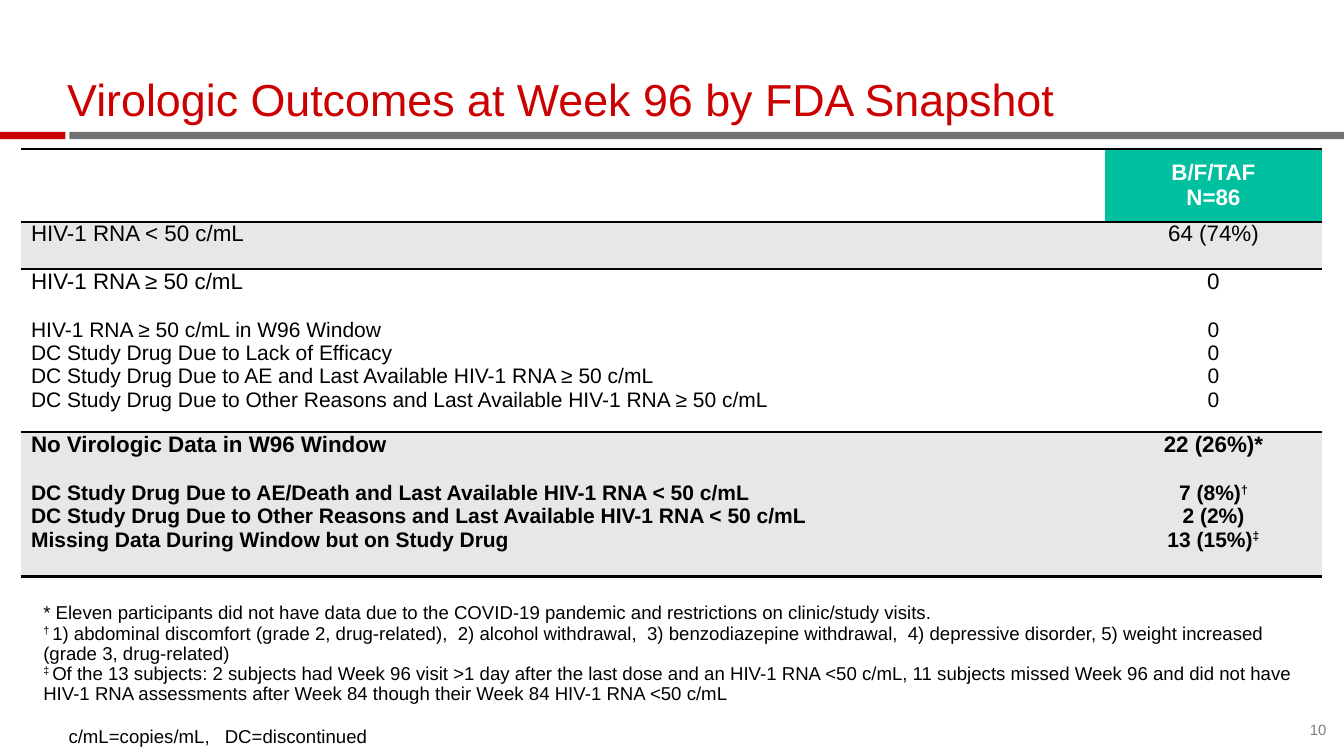
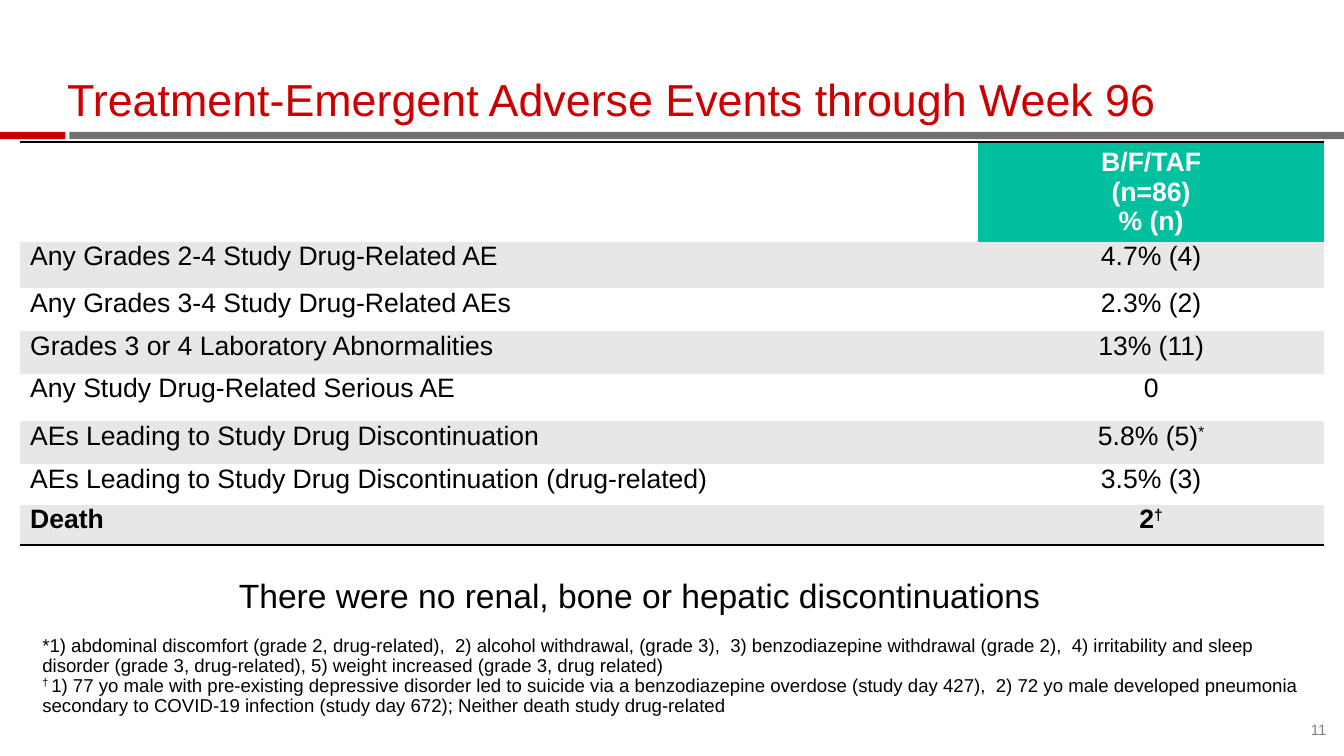
from dataclasses import dataclass

from lxml import etree
from pptx import Presentation
from pptx import util as u
from pptx.dml.color import RGBColor
from pptx.enum import shapes, text
from pptx.oxml.ns import qn

UNIT = u.Pt(6)  # the slide is a grid of 160 columns by 90 rows
COLS, ROWS = 160, 90
NO_STYLE = "{2D5ABB26-0587-4C30-8999-92F81FD0307C}"


@dataclass(frozen=True)
class Theme:
    font: str = "Arial"
    red: str = "CC0000"
    grey: str = "717171"
    teal: str = "00C0A0"
    stripe: str = "E7E7E7"
    white: str = "FFFFFF"
    black: str = "000000"
    muted: str = "7F7F7F"
    title: float = 32
    statement: float = 24
    note: float = 13.3
    number: float = 10.7
    tight: float = 0.9


T = Theme()


def grid(*lengths):
    return [u.Emu(round(n * UNIT)) for n in lengths]


def rgb(color):
    return RGBColor.from_string(color)


def apply(obj, formats):
    for name, value in formats.items():
        setattr(obj, name, value)


class Deck:
    def __init__(self):
        self.prs = Presentation()
        self.prs.slide_width, self.prs.slide_height = grid(COLS, ROWS)
        self.s = None

    def slide(self, title, number):
        self.s = self.prs.slides.add_slide(self.prs.slide_layouts[5])
        self.band(8.25, COLS - 8.25, T.grey)
        self.band(0, 7.8, T.red)
        sp = self.s.shapes.title
        apply(sp, dict(zip(("left", "top", "width", "height"),
                           grid(8, 6.12, 149.3, 8.88))))
        self.frame(sp.text_frame, text.MSO_ANCHOR.BOTTOM)
        self.fill_text(sp.text_frame, [title], T.title, T.red, spacing=T.tight)
        self.label((153.6, 85.8, 4.32, 2.16), [str(number)], T.number, T.muted,
                   align=text.PP_ALIGN.RIGHT, anchor=text.MSO_ANCHOR.BOTTOM)

    def band(self, x, width, color):
        sp = self.s.shapes.add_shape(shapes.MSO_SHAPE.RECTANGLE,
                                     *grid(x, 15.72, width, 0.84))
        sp.shadow.inherit = False
        sp.fill.solid()
        sp.fill.fore_color.rgb = rgb(color)
        sp.line.fill.background()

    def frame(self, tf, anchor):
        apply(tf, dict(margin_left=0, margin_right=0, margin_top=0,
                       margin_bottom=0, word_wrap=True, vertical_anchor=anchor,
                       auto_size=text.MSO_AUTO_SIZE.NONE))

    def fill_text(self, tf, lines, size, color, bold=False, spacing=1.0,
                  align=text.PP_ALIGN.LEFT, detail=None, tab=None):
        """Set one paragraph a line; text between ^ marks is superscript.

        With a detail size, the lines after the first form a smaller group
        set one line apart from it.
        """
        for i, line in enumerate(lines):
            p = tf.paragraphs[0] if i == 0 else tf.add_paragraph()
            if tab:
                tabs = etree.SubElement(p._p.get_or_add_pPr(), qn("a:tabLst"))
                etree.SubElement(tabs, qn("a:tab"), pos=str(grid(tab)[0]), algn="l")
            apply(p, dict(alignment=align, line_spacing=spacing))
            if detail and i == 1:
                p.space_before = u.Pt(detail * 1.15)
            points = detail if detail and i else size
            for j, part in enumerate(line.split("^")):
                if not part:
                    continue
                r = p.add_run()
                r.text = part
                apply(r.font, dict(name=T.font, size=u.Pt(points), bold=bold))
                r.font.color.rgb = rgb(color)
                if j % 2:
                    r._r.get_or_add_rPr().set("baseline", "30000")

    def label(self, box, lines, size, color=T.black, align=text.PP_ALIGN.LEFT,
              anchor=text.MSO_ANCHOR.TOP, spacing=T.tight, tab=None):
        tf = self.s.shapes.add_textbox(*grid(*box)).text_frame
        self.frame(tf, anchor)
        self.fill_text(tf, lines, size, color, spacing=spacing, align=align, tab=tab)

    def rule(self, cell, side, points):
        ln = etree.SubElement(cell._tc.get_or_add_tcPr(), qn("a:" + side),
                              w=str(u.Pt(points)))
        fill = etree.SubElement(ln, qn("a:solidFill"))
        etree.SubElement(fill, qn("a:srgbClr"), val=T.black)

    def table(self, at, widths, heights, header, body, rules, size, detail=None):
        """Draw a striped table; rules maps a row boundary to a line width.

        Each body row is (label lines, value lines, bold).
        """
        box = grid(*at, sum(widths), sum(heights))
        table = self.s.shapes.add_table(len(heights), 2, *box).table
        apply(table, dict(first_row=False, horz_banding=False))
        table._tbl.tblPr.find(qn("a:tableStyleId")).text = NO_STYLE
        for column, width in zip(table.columns, grid(*widths)):
            column.width = width
        rows = [([], header, True)] + body
        for i, (row, height) in enumerate(zip(rows, grid(*heights))):
            table.rows[i].height = height
            *contents, bold = row
            for j, lines in enumerate(contents):
                cell = table.cell(i, j)
                head = i == 0 and j == 1
                side, edge = grid(1.5, 0.4) if head else grid(1.2, 0)
                middle, top = text.MSO_ANCHOR.MIDDLE, text.MSO_ANCHOR.TOP
                apply(cell, dict(margin_left=side, margin_right=side,
                                 margin_top=edge, margin_bottom=edge,
                                 vertical_anchor=middle if head else top))
                for name, boundary in (("lnT", i), ("lnB", i + 1)):
                    if boundary in rules:
                        self.rule(cell, name, rules[boundary])
                cell.fill.solid()
                cell.fill.fore_color.rgb = rgb(
                    T.teal if head else T.stripe if i % 2 else T.white)
                self.fill_text(cell.text_frame, lines, size,
                               T.white if head else T.black, bold,
                               align=text.PP_ALIGN.CENTER if j else text.PP_ALIGN.LEFT,
                               detail=None if head else detail)


def outcomes(deck):
    deck.slide("Virologic Outcomes at Week 96 by FDA Snapshot", 10)
    deck.table(
        (2.5, 17.76), (129, 25.92), (8.64, 5.64, 19.44, 17.16),
        ["B/F/TAF", "N=86"],
        [
            (["HIV-1 RNA < 50 c/mL"], ["64 (74%)"], False),
            (["HIV-1 RNA ≥ 50 c/mL",
              "HIV-1 RNA ≥ 50 c/mL in W96 Window",
              "DC Study Drug Due to Lack of Efficacy",
              "DC Study Drug Due to AE and Last Available HIV-1 RNA ≥ 50 c/mL",
              "DC Study Drug Due to Other Reasons and Last Available "
              "HIV-1 RNA ≥ 50 c/mL"], ["0"] * 5, False),
            (["No Virologic Data in W96 Window",
              "DC Study Drug Due to AE/Death and Last Available HIV-1 RNA < 50 c/mL",
              "DC Study Drug Due to Other Reasons and Last Available "
              "HIV-1 RNA < 50 c/mL",
              "Missing Data During Window but on Study Drug"],
             ["22 (26%)*", "7 (8%)^†^", "2 (2%)", "13 (15%)^‡^"], True),
        ],
        rules={0: 1.5, 1: 1.5, 2: 1.5, 4: 2}, size=16, detail=15)
    deck.label((5.16, 71.88, 150.72, 12.12), [
        "* Eleven participants did not have data due to the COVID-19 pandemic "
        "and restrictions on clinic/study visits.",
        "^† ^1) abdominal discomfort (grade 2, drug-related),  2) alcohol "
        "withdrawal,  3) benzodiazepine withdrawal,  4) depressive disorder, "
        "5) weight increased (grade 3, drug-related)",
        "^‡ ^Of the 13 subjects: 2 subjects had Week 96 visit >1 day after the "
        "last dose and an HIV-1 RNA <50 c/mL, 11 subjects missed Week 96 and did "
        "not have HIV-1 RNA assessments after Week 84 though their Week 84 "
        "HIV-1 RNA <50 c/mL"], T.note)
    deck.label((8.16, 86.64, 40, 2.4),
               ["c/mL=copies/mL,\tDC=discontinued"], T.note, tab=18.6)


def adverse_events(deck):
    deck.slide("Treatment-Emergent Adverse Events through Week 96", 11)
    events = [
        ("Any Grades 2-4 Study Drug-Related AE", "4.7% (4)"),
        ("Any Grades 3-4 Study Drug-Related AEs", "2.3% (2)"),
        ("Grades 3 or 4 Laboratory Abnormalities", "13% (11)"),
        ("Any Study Drug-Related Serious AE", "0"),
        ("AEs Leading to Study Drug Discontinuation", "5.8% (5)^*^"),
        ("AEs Leading to Study Drug Discontinuation (drug-related)", "3.5% (3)"),
        ("Death", "2^†^"),
    ]
    deck.table(
        (2.4, 16.9), (114, 41.28),
        (11.88, 5.52, 5.16, 5.04, 5.64, 5.16, 4.8, 4.8),
        ["B/F/TAF", "(n=86)", "% (n)"],
        [([event], [share], event == "Death") for event, share in events],
        rules={0: 2, 8: 2}, size=19)
    deck.label((28.44, 69, 100, 4.32),
               ["There were no renal, bone or hepatic discontinuations"],
               T.statement)
    deck.label((5.04, 75.72, 150, 12.12), [
        "*1) abdominal discomfort (grade 2, drug-related),  2) alcohol withdrawal, "
        "(grade 3),  3) benzodiazepine withdrawal (grade 2),  4) irritability and "
        "sleep disorder (grade 3, drug-related), 5) weight increased (grade 3, "
        "drug related)",
        "^† ^1) 77 yo male with pre-existing depressive disorder led to suicide "
        "via a benzodiazepine overdose (study day 427),  2) 72 yo male developed "
        "pneumonia secondary to COVID-19 infection (study day 672); Neither death "
        "study drug-related"], T.note)


def main():
    deck = Deck()
    outcomes(deck)
    adverse_events(deck)
    deck.prs.save("out.pptx")


if __name__ == "__main__":
    main()
